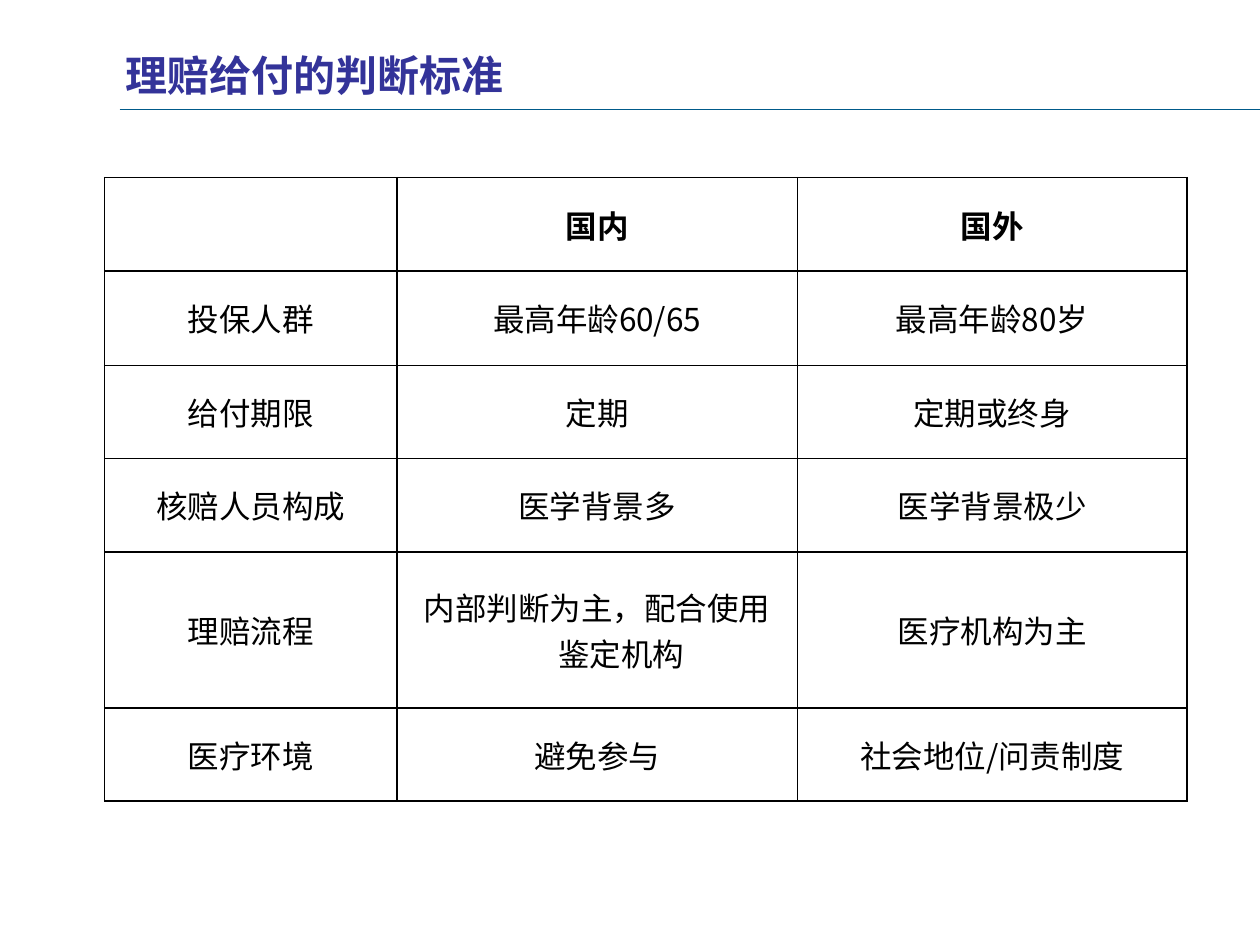
from dataclasses import dataclass

from lxml.etree import SubElement
from pptx import Presentation
from pptx.dml.color import RGBColor
from pptx.enum.shapes import MSO_CONNECTOR
from pptx.enum.text import MSO_ANCHOR, PP_ALIGN
from pptx.oxml.ns import qn
from pptx.util import Inches, Pt


@dataclass(frozen=True)
class Theme:
    """Hold the font, colours and sizes of the slide."""
    font: str = "Noto Sans CJK SC"
    title: str = "333399"
    rule: str = "005A8A"
    ink: str = "000000"
    head_size: int = 24
    cell_size: int = 18
    rule_width: float = 0.75
    edge_width: float = 1


THEME = Theme()
COLS = [2.32, 3.18, 3.09]
ROWS = [0.74, 0.75, 0.74, 0.74, 1.24, 0.74]
CELLS = [
    ["", "国内", "国外"],
    ["投保人群", "最高年龄60/65", "最高年龄80岁"],
    ["给付期限", "定期", "定期或终身"],
    ["核赔人员构成", "医学背景多", "医学背景极少"],
    ["理赔流程", "内部判断为主，配合使用鉴定机构", "医疗机构为主"],
    ["医疗环境", "避免参与", "社会地位/问责制度"],
]


def add_run(para, text, size, color, bold=False):
    """Add one styled run to a paragraph."""
    run = para.add_run()
    run.text = text
    font = run.font
    font.name, font.size, font.bold = THEME.font, Pt(size), bold
    font.color.rgb = RGBColor.from_string(color)
    SubElement(font._element, qn("a:ea"), typeface=THEME.font)


def add_title(slide, text):
    """Add the slide title."""
    box = slide.shapes.add_textbox(Inches(0.9), Inches(0.34), Inches(7.83), Inches(0.5))
    box.text_frame.word_wrap = True
    add_run(box.text_frame.paragraphs[0], text, THEME.head_size, THEME.title, True)


def add_rule(slide):
    """Draw the line below the title."""
    rule = slide.shapes.add_connector(
        MSO_CONNECTOR.STRAIGHT, Inches(0.95), Inches(0.87), Inches(10), Inches(0.87))
    rule.line.color.rgb = RGBColor.from_string(THEME.rule)
    rule.line.width = Pt(THEME.rule_width)
    SubElement(rule._element.spPr, qn("a:effectLst"))


def set_edges(cell):
    """Draw all four borders of a cell."""
    props = cell._tc.get_or_add_tcPr()
    for side in ("L", "R", "T", "B"):
        edge = SubElement(props, qn(f"a:ln{side}"), w=str(Pt(THEME.edge_width)))
        fill = SubElement(edge, qn("a:solidFill"))
        SubElement(fill, qn("a:srgbClr"), val=THEME.ink)


def fill_cell(cell, text, bold):
    """Style a cell and write its text."""
    set_edges(cell)
    cell.fill.background()
    cell.vertical_anchor = MSO_ANCHOR.MIDDLE
    if not text:
        return
    para = cell.text_frame.paragraphs[0]
    para.alignment = PP_ALIGN.CENTER
    props = para._p.get_or_add_pPr()
    props.set("marL", str(Inches(0.38)))
    props.set("indent", str(Inches(-0.38)))
    add_run(para, text, THEME.cell_size, THEME.ink, bold)


def add_grid(slide):
    """Add the table that compares home and abroad."""
    grid = slide.shapes.add_table(
        len(ROWS), len(COLS), Inches(0.83), Inches(1.41),
        Inches(sum(COLS)), Inches(sum(ROWS))).table
    grid.horz_banding = False
    for col, width in zip(grid.columns, COLS):
        col.width = Inches(width)
    for i, (row, height) in enumerate(zip(grid.rows, ROWS)):
        row.height = Inches(height)
        for cell, text in zip(row.cells, CELLS[i]):
            fill_cell(cell, text, i == 0)


def main():
    """Build and save the slide."""
    deck = Presentation()
    deck.slide_width, deck.slide_height = Inches(10), Inches(7.5)
    slide = deck.slides.add_slide(deck.slide_layouts[6])
    add_rule(slide)
    add_grid(slide)
    add_title(slide, "理赔给付的判断标准")
    deck.save("out.pptx")


if __name__ == "__main__":
    main()
